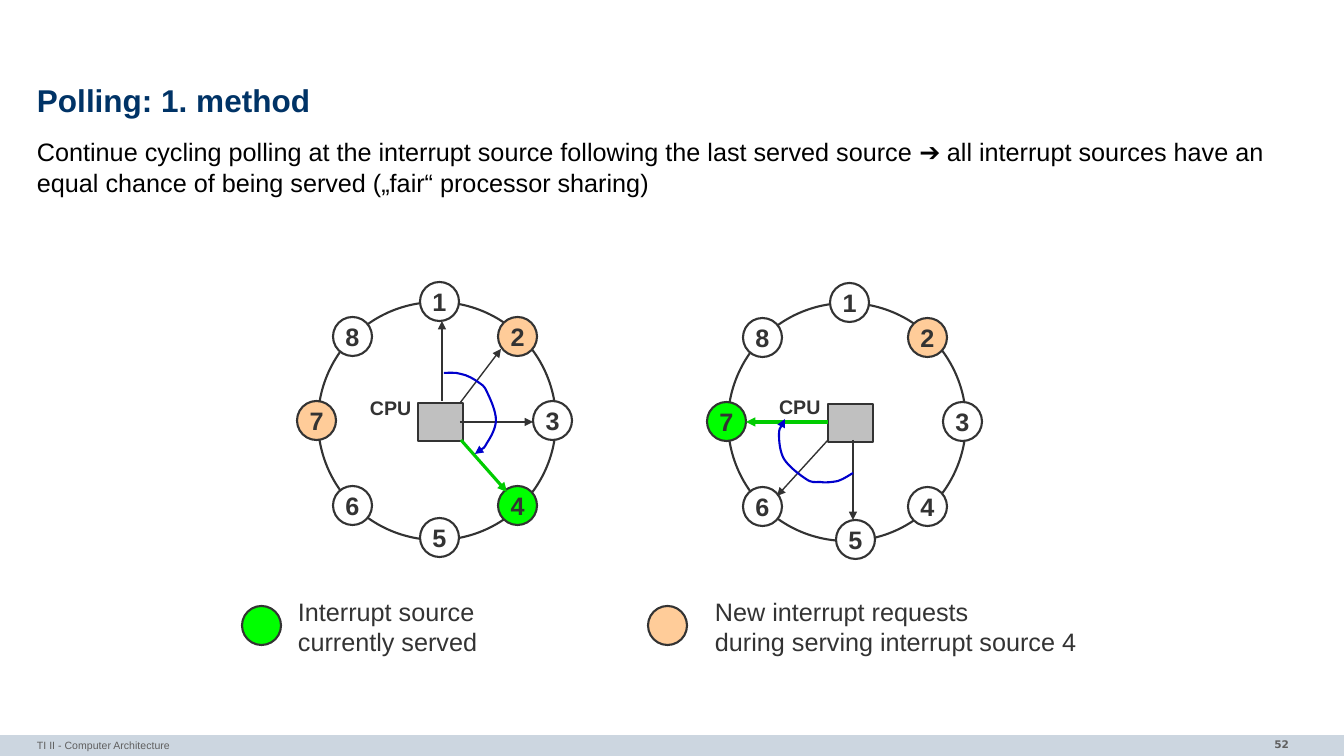
"""Build the slide on cyclic interrupt polling with two polling rings."""
from lxml import etree
from pptx import Presentation
from pptx.dml.color import RGBColor
from pptx.enum.shapes import MSO_CONNECTOR, MSO_SHAPE
from pptx.enum.text import MSO_ANCHOR, PP_ALIGN
from pptx.oxml.ns import qn
from pptx.util import Pt

PX = 914400 / 100.8
OVAL, RECTANGLE = MSO_SHAPE.OVAL, MSO_SHAPE.RECTANGLE
STRAIGHT = MSO_CONNECTOR.STRAIGHT
LEFT, CENTER, RIGHT = PP_ALIGN.LEFT, PP_ALIGN.CENTER, PP_ALIGN.RIGHT
TOP, MIDDLE = MSO_ANCHOR.TOP, MSO_ANCHOR.MIDDLE
DARK, GRAY, WHITE = "333333", "5F5F5F", "FFFFFF"
SERVED, REQUEST = "00FF00", "FFCC99"
ARROW, SWEEP = "00CC00", "0000CC"
NODE = 39

presentation = Presentation()
presentation.slide_width = round(1344 * PX)
presentation.slide_height = round(756 * PX)
slide = presentation.slides.add_slide(presentation.slide_layouts[6])
shapes = slide.shapes


def color(value):
    return RGBColor.from_string(value)


def write(shape, text, size, ink=DARK, bold=False, align=LEFT, anchor=TOP,
          wrap=False, spacing=None, font_name="Arial"):
    frame = shape.text_frame
    frame.text = text
    frame_format = {"margin_left": 0, "margin_right": 0, "margin_top": 0,
                    "margin_bottom": 0, "word_wrap": wrap, "vertical_anchor": anchor}
    for name, value in frame_format.items():
        setattr(frame, name, value)
    for paragraph in frame.paragraphs:
        paragraph.alignment = align
        paragraph.line_spacing = spacing
        for run in paragraph.runs:
            for name, value in {"name": font_name, "size": Pt(size), "bold": bold}.items():
                setattr(run.font, name, value)
            run.font.color.rgb = color(ink)


footer_bar = shapes.add_shape(RECTANGLE, 0, *(round(v * PX) for v in (735, 1344, 21)))
footer_bar.shadow.inherit = False
footer_bar.fill.solid()
footer_bar.fill.fore_color.rgb = color("CCD6E0")
footer_bar.line.fill.background()

BODY = ("Continue cycling polling at the interrupt source following the last served source ➔ "
        "all interrupt sources have an equal chance of being served („fair“ processor sharing)")
texts = [
    ((37, 79, 1270, 47), "Polling: 1. method",
     {"size": 22.5, "ink": "003366", "bold": True, "anchor": MIDDLE, "wrap": True, "spacing": 0.85}),
    ((37, 136, 1270, 64), BODY,
     {"size": 18, "ink": "000000", "wrap": True, "spacing": 1.02}),
    ((37, 739, 879, 15), "TI II - Computer Architecture",
     {"size": 7.5, "ink": GRAY, "wrap": True}),
    ((1119, 738, 170, 16), "52",
     {"size": 7.5, "ink": GRAY, "bold": True, "align": RIGHT, "wrap": True,
      "font_name": "DejaVu Sans"}),
    ((370, 396, 44, 23), "CPU", {"size": 14, "bold": True}),
    ((779, 395, 44, 23), "CPU", {"size": 14, "bold": True}),
    ((298, 596, 185, 61), "Interrupt source\ncurrently served", {"size": 18}),
    ((715, 596, 379, 61), "New interrupt requests\vduring serving interrupt source 4",
     {"size": 18}),
]

node_places = {1: (420, 282), 2: (498, 317), 3: (533, 401), 4: (498, 486),
               5: (420, 518), 6: (333, 486), 7: (297, 401), 8: (333, 317)}
rings = [
    {"shift": (0, 0), "fills": {2: REQUEST, 4: SERVED, 7: REQUEST}, "moved": {}},
    {"shift": (410, 1), "fills": {2: REQUEST, 7: SERVED}, "moved": {5: (426, 519)}},
]
outlined = []
for ring in rings:
    shift_x, shift_y = ring["shift"]
    outlined.append((OVAL, (318 + shift_x, 302 + shift_y, 238, 238), None, ""))
    for number, place in (node_places | ring["moved"]).items():
        outlined.append((OVAL, (place[0] + shift_x, place[1] + shift_y, NODE, NODE),
                         ring["fills"].get(number, WHITE), str(number)))
    outlined.append((RECTANGLE, (418 + shift_x, 403 + shift_y, 45, 38), "C0C0C0", ""))
for left, fill in ((242, SERVED), (648, REQUEST)):
    outlined.append((OVAL, (left, 606, NODE, NODE), fill, ""))

for kind, box, fill, label in outlined:
    shape = shapes.add_shape(kind, *(round(v * PX) for v in box))
    shape.shadow.inherit = False
    if fill:
        shape.fill.solid()
        shape.fill.fore_color.rgb = color(fill)
    else:
        shape.fill.background()
    shape.line.color.rgb = color(DARK)
    shape.line.width = Pt(1.5)
    if label:
        write(shape, label, 18, bold=True, align=CENTER, anchor=MIDDLE)

for box, text, text_format in texts:
    write(shapes.add_textbox(*(round(v * PX) for v in box)), text, **text_format)

arrows = [
    ((460, 422, 533, 422), DARK, 1),
    ((442, 401, 442, 321), DARK, 1),
    ((460, 403, 501, 349), DARK, 1),
    ((461, 440, 507, 492), ARROW, 2.25),
    ((828, 422, 746, 422), ARROW, 2.25),
    ((853, 440, 853, 520), DARK, 1),
    ((828, 440, 777, 496), DARK, 1),
]
pointed = []
for ends, ink, width in arrows:
    connector = shapes.add_connector(STRAIGHT, *(round(v * PX) for v in ends))
    etree.SubElement(connector.element.spPr, qn("a:effectLst"))
    pointed.append((connector, ink, width))

sweeps = [
    [(444, 373), (446, 373), (456, 372), (461, 374), (467, 375), (474, 379), (478, 382),
     (482, 385), (484, 385), (487, 392), (490, 398), (496, 411), (496, 420),
     (496, 428), (491, 437), (487, 443), (484, 449), (477, 452), (475, 454)],
    [(853, 473), (851, 474), (844, 479), (838, 481), (833, 482), (825, 483), (820, 482),
     (814, 482), (812, 483), (806, 479), (800, 475), (789, 467), (784, 459),
     (780, 452), (779, 442), (779, 435), (779, 428), (784, 422), (785, 419)],
]
for start, *controls in sweeps:
    builder = shapes.build_freeform(*start, scale=PX)
    builder.add_line_segments(controls, close=False)
    sweep = builder.convert_to_shape()
    sweep.shadow.inherit = False
    sweep.fill.background()
    segments = list(sweep.element.iter(qn("a:lnTo")))
    for first in range(0, len(segments), 3):
        curve = etree.Element(qn("a:cubicBezTo"))
        segments[first].addprevious(curve)
        for segment in segments[first:first + 3]:
            curve.append(segment[0])
            segment.getparent().remove(segment)
    pointed.append((sweep, SWEEP, 1.5))

for shape, ink, width in pointed:
    shape.line.color.rgb = color(ink)
    shape.line.width = Pt(width)
    etree.SubElement(shape.line._get_or_add_ln(), qn("a:tailEnd"), type="triangle")

presentation.save("out.pptx")
